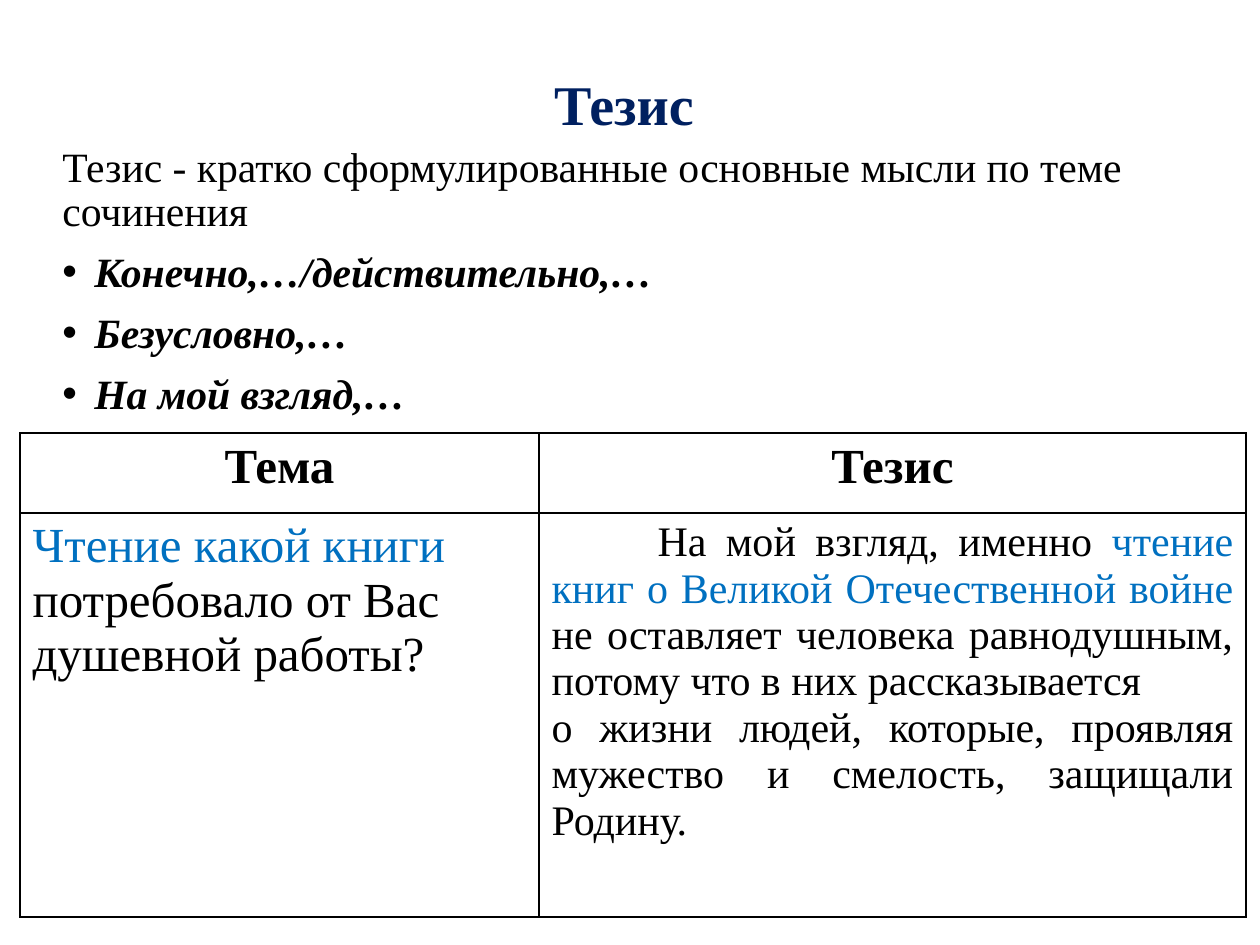
from lxml import etree
from pptx import Presentation
from pptx.dml.color import RGBColor
from pptx.enum.text import MSO_ANCHOR, PP_ALIGN
from pptx.oxml.ns import qn
from pptx.util import Pt

LEFT, CENTER, JUSTIFY = PP_ALIGN.LEFT, PP_ALIGN.CENTER, PP_ALIGN.JUSTIFY
TOP, MIDDLE = MSO_ANCHOR.TOP, MSO_ANCHOR.MIDDLE
PX_PER_INCH = 126
COLORS = {"text": "000000", "title": "002060", "accent": "0070C0", "line": "000000"}


def px(length):
    return round(length * 914400 / PX_PER_INCH)


class SlideBuilder:
    font = "Times New Roman"

    def __init__(self, page):
        self.page = page

    def span(self, para, text, size, color="text", bold=False, italic=False):
        run = para.add_run()
        run.text = text
        run.font.name = self.font
        run.font.size = Pt(size)
        run.font.bold = bold
        run.font.italic = italic
        run.font.color.rgb = RGBColor.from_string(COLORS[color])

    def para(self, frame, spans, align=LEFT, spacing=1.0, before=0, bullet=False, first_line=0):
        """Fill the empty first paragraph of the frame, or append a new one."""
        first = frame.paragraphs[0]
        is_first = not first.runs
        para = first if is_first else frame.add_paragraph()
        para.alignment = align
        para.line_spacing = spacing
        para.space_before = Pt(0 if is_first else before)
        properties = para._p.get_or_add_pPr()
        if bullet:
            properties.set("marL", str(px(32)))
            properties.set("indent", str(-px(32)))
            etree.SubElement(properties, qn("a:buFont")).set("typeface", "Arial")
            etree.SubElement(properties, qn("a:buChar")).set("char", "•")
        elif first_line:
            properties.set("marL", "0")
            properties.set("indent", str(px(first_line)))
        for text, style in spans:
            self.span(para, text, **style)

    def text_box(self, left, top, width, height, anchor=TOP):
        box = self.page.shapes.add_textbox(px(left), px(top), px(width), px(height))
        frame = box.text_frame
        frame.word_wrap = True
        frame.vertical_anchor = anchor
        return frame

    def border(self, cell):
        properties = cell._tc.get_or_add_tcPr()
        for index, side in enumerate(("lnL", "lnR", "lnT", "lnB")):
            line = etree.Element(qn(f"a:{side}"), w=str(Pt(1)))
            fill = etree.SubElement(line, qn("a:solidFill"))
            etree.SubElement(fill, qn("a:srgbClr")).set("val", COLORS["line"])
            properties.insert(index, line)

    def table(self, left, top, columns, rows):
        frame = self.page.shapes.add_table(len(rows), len(columns), px(left), px(top),
                                           px(sum(columns)), px(sum(rows)))
        table = frame.table
        table.first_row = False
        table.horz_banding = False
        for column, width in zip(table.columns, columns):
            column.width = px(width)
        for row, height in zip(table.rows, rows):
            row.height = px(height)
        for cell in table.iter_cells():
            cell.fill.background()
            self.border(cell)
        return table


def main():
    deck = Presentation()
    deck.slide_width, deck.slide_height = px(1260), px(945)
    builder = SlideBuilder(deck.slides.add_slide(deck.slide_layouts[6]))

    title = builder.text_box(74, 34, 1100, 147, MIDDLE)
    builder.para(title, [("Тезис", {"size": 32, "color": "title", "bold": True})],
                 CENTER, spacing=0.9)

    body = builder.text_box(50, 142, 1123, 278)
    body_style = {"size": 23.8}
    builder.para(body, [("Тезис - кратко сформулированные основные мысли по теме сочинения",
                         body_style)], spacing=0.87)
    opening_style = {**body_style, "bold": True, "italic": True}
    for opening, align in (("Конечно,…/действительно,…", LEFT), ("Безусловно,…", LEFT),
                           ("На мой взгляд,…", JUSTIFY)):
        builder.para(body, [(opening, opening_style)], align, spacing=0.87,
                     before=10, bullet=True)

    table = builder.table(20, 433, columns=(519, 707), rows=(80, 404))
    for column, heading in enumerate(("Тема", "Тезис")):
        builder.para(table.cell(0, column).text_frame,
                     [(heading, {"size": 28, "bold": True})], CENTER)

    builder.para(table.cell(1, 0).text_frame, [
        ("Чтение какой книги ", {"size": 28, "color": "accent"}),
        ("потребовало от Вас душевной работы?", {"size": 28}),
    ])
    thesis = table.cell(1, 1).text_frame
    thesis_style = {"size": 24}
    builder.para(thesis, [
        ("На мой взгляд, именно ", thesis_style),
        ("чтение книг о Великой Отечественной войне ", {**thesis_style, "color": "accent"}),
        ("не оставляет человека равнодушным, потому что в них рассказывается ", thesis_style),
    ], JUSTIFY, first_line=106)
    builder.para(thesis, [("о жизни людей, которые, проявляя мужество и смелость, "
                           "защищали Родину.", thesis_style)], JUSTIFY)

    deck.save("out.pptx")


if __name__ == "__main__":
    main()
